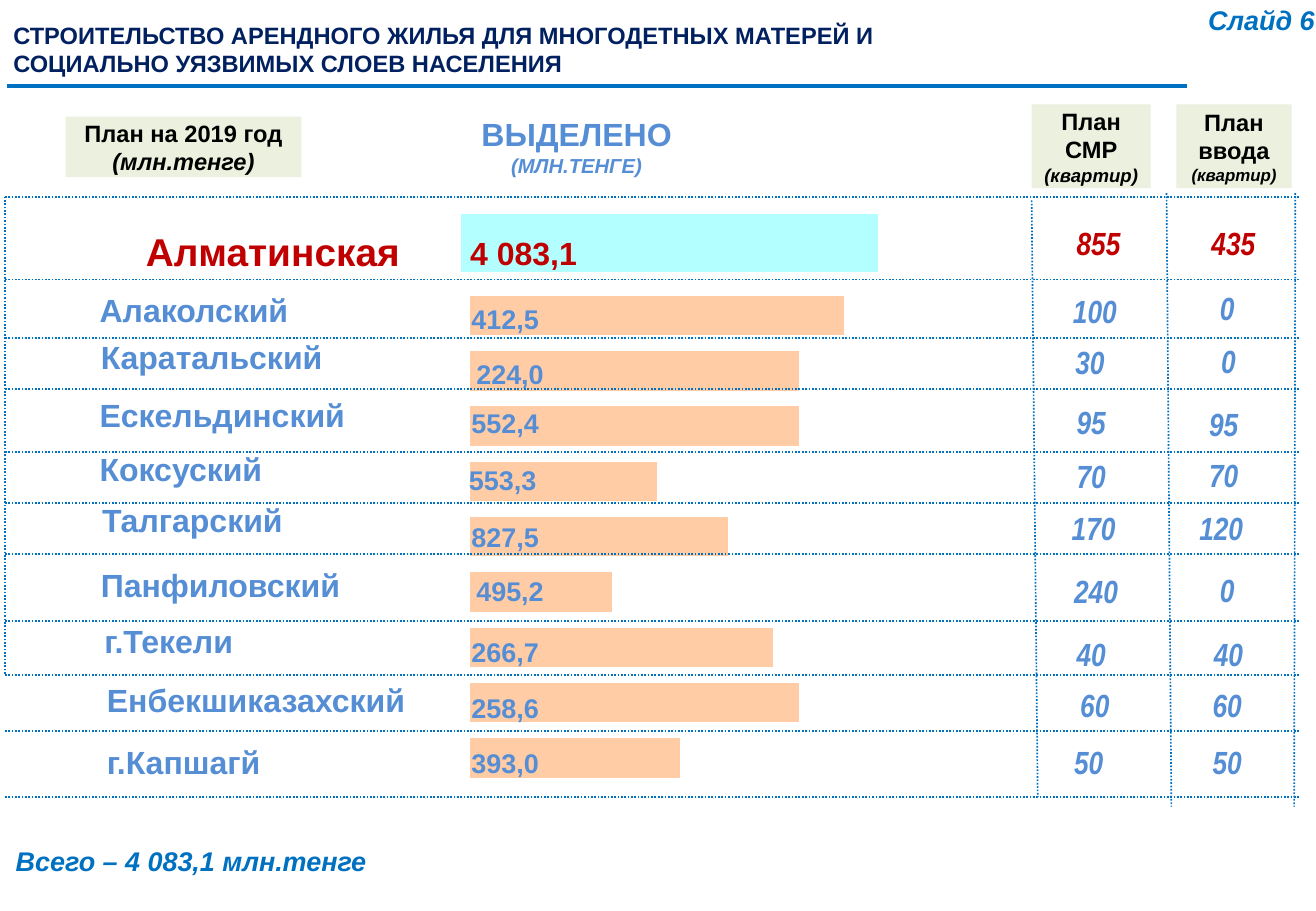
from dataclasses import dataclass
from itertools import pairwise

from lxml.etree import SubElement
from pptx import Presentation
from pptx.chart.data import CategoryChartData
from pptx.dml.color import RGBColor
from pptx.enum.chart import XL_CHART_TYPE
from pptx.enum.dml import MSO_LINE
from pptx.enum.shapes import MSO_CONNECTOR, MSO_SHAPE
from pptx.enum.text import MSO_ANCHOR, PP_ALIGN
from pptx.oxml import parse_xml
from pptx.oxml.ns import nsdecls, qn
from pptx.util import Inches, Pt

CELL = Inches(0.01)
COLS, ROWS = 1083, 750


@dataclass(frozen=True)
class Theme:
    font: str = "Arial"
    narrow: str = "Arial Narrow"
    chart_font: str = "Calibri"
    navy: str = "002060"
    blue: str = "0070C0"
    sky: str = "558ED5"
    red: str = "C00000"
    black: str = "000000"
    label_fill: str = "EBF1DE"
    region_bar: str = "B3FFFF"
    district_bar: str = "FFCCA6"
    region: int = 23
    large: int = 19
    chart: int = 18
    medium: int = 16
    small: int = 14
    note: int = 12
    unit: int = 11
    tiny: int = 10


T = Theme()

# name, amount, flats under construction, flats commissioned: (text, x shift, y shift)
DISTRICTS = [
    (("Алаколский", 0, 1), ("412,5", 0, 8), ("100", 1, 2), ("0", 0, -1)),
    (("Каратальский", 1, -5), ("224,0", 4, 9), ("30", -3, -1), ("0", 1, -2)),
    (("Ескельдинский", 0, -5), ("552,4", 0, 2), ("95", -2, 1), ("95", -3, 3)),
    (("Коксуский", 0, -7), ("553,3", -2, 2), ("70", -2, -1), ("70", -3, -2)),
    (("Талгарский", 2, -7), ("827,5", 0, 7), ("170", 0, -1), ("120", -5, -1)),
    (("Панфиловский", 1, -2), ("495,2", 4, 3), ("240", 2, 3), ("0", 0, 2)),
    (("г.Текели", 4, -6), ("266,7", 0, 3), ("40", -2, 5), ("40", 1, 5)),
    (("Енбекшиказахский", 6, -3), ("258,6", 0, 4), ("60", 1, 1), ("60", 0, 1)),
    (("г.Капшагй", 6, -2), ("393,0", 0, -1), ("50", -4, -2), ("50", 0, -2)),
]
REGION = (("Алматинская", 38, 11), ("4 083,1", -1, 12), ("855", 4, 4), ("435", 5, 4))
ROW_EDGES = [0, 68, 116, 158, 210, 252, 294, 349, 394, 440, 494]
DISTRICT_BARS = [56, 88, 81, 38, 69, 50, 88, 88, 100]
DISTRICT_BARS = [56, 88, 81, 38, 69, 50, 88, 88, 100]


def cells(*values):
    return [int(v * CELL) for v in values]


def write(sp, lines, align, anchor=MSO_ANCHOR.MIDDLE, inset=0):
    tf = sp.text_frame
    tf.word_wrap = True
    tf.vertical_anchor = anchor
    tf.margin_left = tf.margin_right = int(inset * CELL)
    tf.margin_top = tf.margin_bottom = 0
    tf.text = "\n".join(line[0] for line in lines)
    for p, (_, size, color, italic, font) in zip(tf.paragraphs, lines):
        p.alignment = align
        for r in p.runs:
            r.font.name = font
            r.font.size = Pt(size)
            r.font.bold = True
            r.font.italic = italic
            r.font.color.rgb = RGBColor.from_string(color)


def add_text(slide, box, lines, align=PP_ALIGN.LEFT):
    write(slide.shapes.add_textbox(*cells(*box)), lines, align)


def add_label(slide, box, lines):
    sp = slide.shapes.add_shape(MSO_SHAPE.RECTANGLE, *cells(*box))
    sp.shadow.inherit = False
    sp.fill.solid()
    sp.fill.fore_color.rgb = RGBColor.from_string(T.label_fill)
    sp.line.fill.background()
    write(sp, lines, PP_ALIGN.CENTER, inset=8)


def add_line(slide, ends, width=1, dash=MSO_LINE.ROUND_DOT):
    cxn = slide.shapes.add_connector(MSO_CONNECTOR.STRAIGHT, *cells(*ends))
    cxn.line.color.rgb = RGBColor.from_string(T.blue)
    cxn.line.width = Pt(width)
    cxn.line.dash_style = dash
    SubElement(cxn._element.spPr, qn("a:effectLst"))


def add_bars(slide, box, values, color, maximum, plot_width):
    data = CategoryChartData()
    data.categories = [str(n) for n in range(1, len(values) + 1)]
    data.add_series("Series 1", values)
    chart = slide.shapes.add_chart(XL_CHART_TYPE.BAR_STACKED, *cells(*box), data).chart
    chart.has_legend = chart.has_title = False
    chart.font.name = T.chart_font
    chart.font.size = Pt(T.chart)
    chart.font.color.rgb = RGBColor.from_string(T.black)
    chart.value_axis.minimum_scale = 0
    chart.value_axis.maximum_scale = maximum
    chart.value_axis.has_major_gridlines = False
    chart.value_axis.visible = chart.category_axis.visible = False
    plot = chart.plots[0]
    plot.gap_width, plot.overlap, plot.vary_by_categories = 40, 100, False
    fill = plot.series[0].format.fill
    fill.solid()
    fill.fore_color.rgb = RGBColor.from_string(color)
    area = chart._chartSpace.chart.plotArea
    for old in area.findall(qn("c:layout")):
        area.remove(old)
    shares = {"x": 0.121, "y": 0.057, "w": plot_width, "h": 0.899}
    modes = '<c:layoutTarget val="inner"/><c:xMode val="edge"/><c:yMode val="edge"/>'
    sizes = "".join(f'<c:{k} val="{v}"/>' for k, v in shares.items())
    area.insert(0, parse_xml(
        f'<c:layout {nsdecls("c")}><c:manualLayout>{modes}{sizes}</c:manualLayout></c:layout>'))


def build_heading(slide, box):
    x, y, w, h = box
    title = ["СТРОИТЕЛЬСТВО АРЕНДНОГО ЖИЛЬЯ ДЛЯ МНОГОДЕТНЫХ МАТЕРЕЙ И",
             "СОЦИАЛЬНО УЯЗВИМЫХ СЛОЕВ НАСЕЛЕНИЯ"]
    add_text(slide, (x + 11, y + 17, 760, 47),
             [(line, T.small, T.navy, False, T.font) for line in title])
    add_text(slide, (x + w - 100, y + 3, 99, 27),
             [("Слайд 6", T.medium, T.blue, True, T.font)], PP_ALIGN.RIGHT)
    add_line(slide, (x + 6, y + h, x + 977, y + h), 2.25, MSO_LINE.SOLID)


def build_labels(slide, box):
    x, y, w, h = box

    def line(text, size=T.small, italic=False, color=T.black):
        return text, size, color, italic, T.font

    add_label(slide, (x + 54, y + 10, 194, 50),
              [line("План на 2019 год"), line("(млн.тенге)", italic=True)])
    add_text(slide, (x + 385, y + 3, 179, 62),
             [line("ВЫДЕЛЕНО", T.large, color=T.sky),
              line("(МЛН.ТЕНГЕ)", T.note, True, T.sky)], PP_ALIGN.CENTER)
    add_label(slide, (x + 849, y, 98, h),
              [line("План"), line("СМР"), line("(квартир)", T.unit, True)])
    add_label(slide, (x + 968, y, 95, h),
              [line("План ввода"), line("(квартир)", T.tiny, True)])


def build_row(slide, box, row, name_size, amount_size, color):
    x, y, w, h = box
    columns = [
        (78, 320, name_size, False, T.font, PP_ALIGN.LEFT),
        (384, 150, amount_size, False, T.font, PP_ALIGN.LEFT),
        (846, 100, T.large, True, T.narrow, PP_ALIGN.CENTER),
        (956, 100, T.large, True, T.narrow, PP_ALIGN.CENTER),
    ]
    for (text, dx, dy), (left, width, size, italic, font, align) in zip(row, columns):
        add_text(slide, (x + left + dx, y + dy, width, h),
                 [(text, size, color, italic, font)], align)


def build_grid(slide, box):
    x, y, w, h = box
    add_bars(slide, (x + 311, y + 49, 592, 456), DISTRICT_BARS, T.district_bar, 112.5, 0.586)
    for edge in ROW_EDGES:
        add_line(slide, (x, y + edge, x + w, y + edge))
    for x1, y1, x2, y2 in [(0, 0, 0, 394), (845, 3, 850, h),
                           (956, -3, 960, h + 8), (1062, -3, 1061, h + 8)]:
        add_line(slide, (x + x1, y + y1, x + x2, y + y2))
    add_bars(slide, (x + 307, y, 562, 75), [100], T.region_bar, 120, 0.734)
    for n, (row, (top, bottom)) in enumerate(zip([REGION] + DISTRICTS, pairwise(ROW_EDGES))):
        style = (T.large, T.medium, T.sky) if n else (T.region, T.large, T.red)
        build_row(slide, (x, y + top, w, bottom - top), row, *style)


def build_total(slide, box):
    add_text(slide, box, [("Всего – 4 083,1 млн.тенге", T.medium, T.blue, True, T.font)])


def main():
    prs = Presentation()
    prs.slide_width, prs.slide_height = cells(COLS, ROWS)
    slide = prs.slides.add_slide(prs.slide_layouts[6])
    build_heading(slide, (0, 0, COLS, 71))
    build_labels(slide, (0, 86, COLS, 69))
    build_grid(slide, (4, 162, 1066, 494))
    build_total(slide, (13, 695, 340, 27))
    prs.save("out.pptx")


if __name__ == "__main__":
    main()
